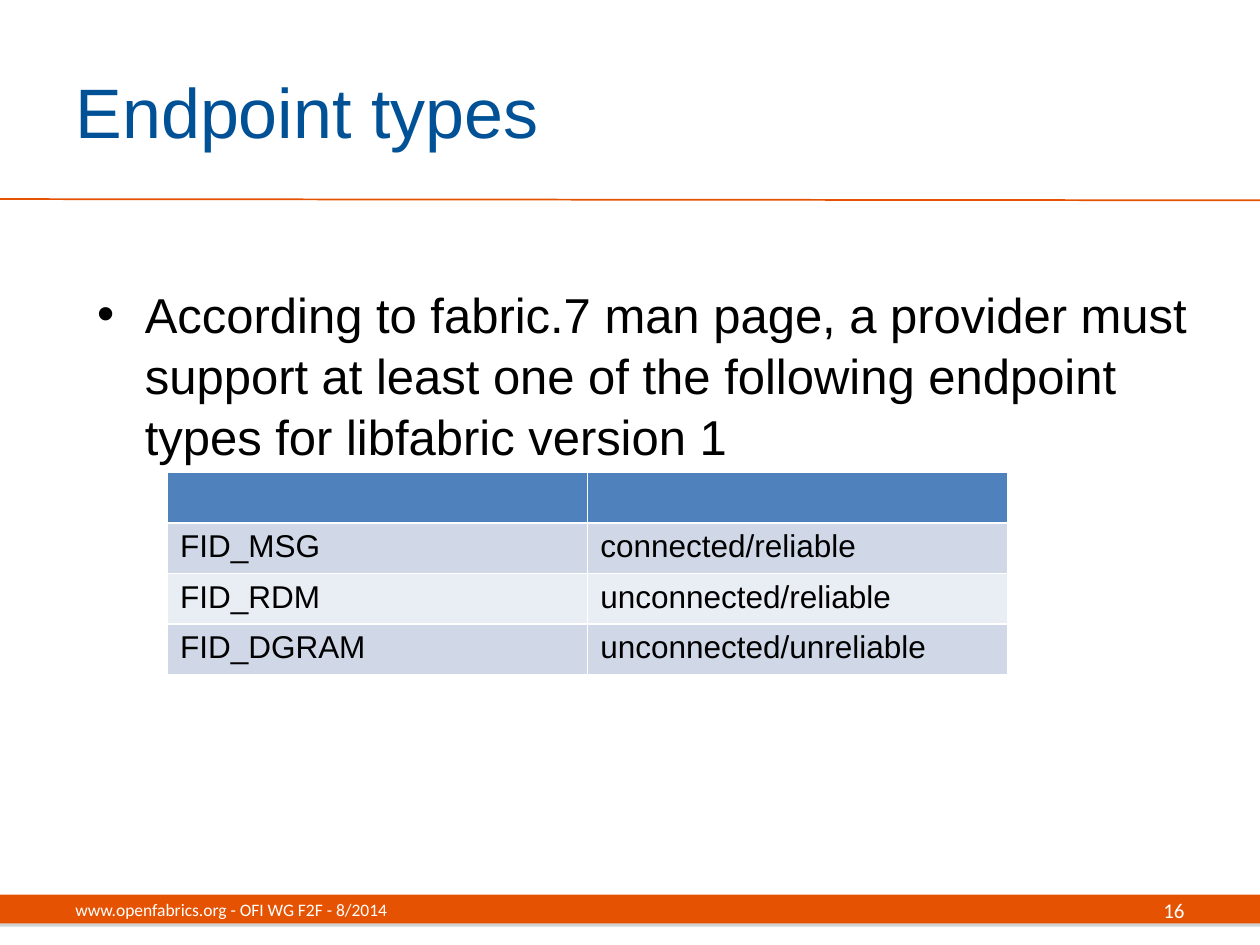
"""Build the "Endpoint types" slide with its bullet, table and footer."""
from lxml import etree
from pptx import Presentation
from pptx.dml.color import RGBColor
from pptx.enum import shapes, text
from pptx.oxml import parse_xml
from pptx.oxml.ns import nsdecls, qn
from pptx.util import Inches, Pt


def paint(color_format, hex_color):
    color_format.rgb = RGBColor.from_string(hex_color)


def write(paragraph, wording, size, font_name, hex_color):
    run = paragraph.add_run()
    run.text = wording
    run.font.size = Pt(size)
    run.font.name = font_name
    paint(run.font.color, hex_color)


ORANGE, WHITE, BLACK = "E55302", "FFFFFF", "000000"

prs = Presentation()
prs.slide_width, prs.slide_height = Inches(10), Inches(7.5)
slide = prs.slides.add_slide(prs.slide_layouts[1])

footer_bar = slide.shapes.add_shape(
    shapes.MSO_SHAPE.RECTANGLE, Inches(0), Inches(7.1), Inches(10), Inches(0.23))
footer_bar.fill.solid()
paint(footer_bar.fill.fore_color, ORANGE)
footer_bar.line.fill.background()
footer_bar._element.spPr.append(parse_xml(
    f'<a:effectLst {nsdecls("a")}><a:outerShdw dist="22860" dir="5400000" rotWithShape="0">'
    '<a:srgbClr val="808080"><a:alpha val="35000"/></a:srgbClr>'
    '</a:outerShdw></a:effectLst>'))

title_rule = slide.shapes.add_connector(
    shapes.MSO_CONNECTOR.STRAIGHT, Inches(0), Inches(1.58), Inches(10), Inches(1.59))
paint(title_rule.line.color, ORANGE)
title_rule.line.width = Pt(1)
etree.SubElement(title_rule._element.spPr, qn("a:effectLst"))

title = slide.shapes.title
title.left, title.top, title.width, title.height = (
    Inches(0.5), Inches(0.25), Inches(8.17), Inches(1.25))
title.text_frame.vertical_anchor = text.MSO_ANCHOR.MIDDLE
heading = title.text_frame.paragraphs[0]
heading.alignment = text.PP_ALIGN.LEFT
write(heading, "Endpoint types", 40, "Arial", "005195")

body = slide.placeholders[1]
body.left, body.top, body.width, body.height = (
    Inches(0.67), Inches(2.19), Inches(9), Inches(5.06))
requirement = body.text_frame.paragraphs[0]
indents = requirement._p.get_or_add_pPr()
indents.set("marL", str(Inches(0.38)))
indents.set("indent", str(Inches(-0.38)))
etree.SubElement(indents, qn("a:buChar")).set("char", "•")
requirement.space_before = Pt(0)
requirement.line_spacing = 1.04
write(requirement,
      "According to fabric.7 man page, a provider must support at least one of "
      "the following endpoint types for libfabric version 1", 28, "Arial", BLACK)

footers = [
    (0.5, 3.17, "www.openfabrics.org - OFI WG F2F - 8/2014", 10, text.PP_ALIGN.LEFT),
    (7.17, 2.33, "16", 12, text.PP_ALIGN.RIGHT),
]
for left, width, wording, size, alignment in footers:
    footer = slide.shapes.add_textbox(
        Inches(left), Inches(7.02), Inches(width), Inches(0.4)).text_frame
    footer.word_wrap = True
    footer.vertical_anchor = text.MSO_ANCHOR.MIDDLE
    footer.paragraphs[0].alignment = alignment
    write(footer.paragraphs[0], wording, size, "Calibri", WHITE)

endpoints = [
    ("", ""),
    ("FID_MSG", "connected/reliable"),
    ("FID_RDM", "unconnected/reliable"),
    ("FID_DGRAM", "unconnected/unreliable"),
]
row_fills = ["4F81BD", "D0D8E8", "E9EDF4", "D0D8E8"]
endpoint_table = slide.shapes.add_table(
    len(endpoints), 2, Inches(1.33), Inches(3.75), Inches(6.67), Inches(1.52)).table
for row, endpoint, row_fill in zip(endpoint_table.rows, endpoints, row_fills):
    for cell, wording in zip(row.cells, endpoint):
        cell.fill.solid()
        paint(cell.fill.fore_color, row_fill)
        if wording:
            write(cell.text_frame.paragraphs[0], wording, 18, "Arial", BLACK)

prs.save("out.pptx")
